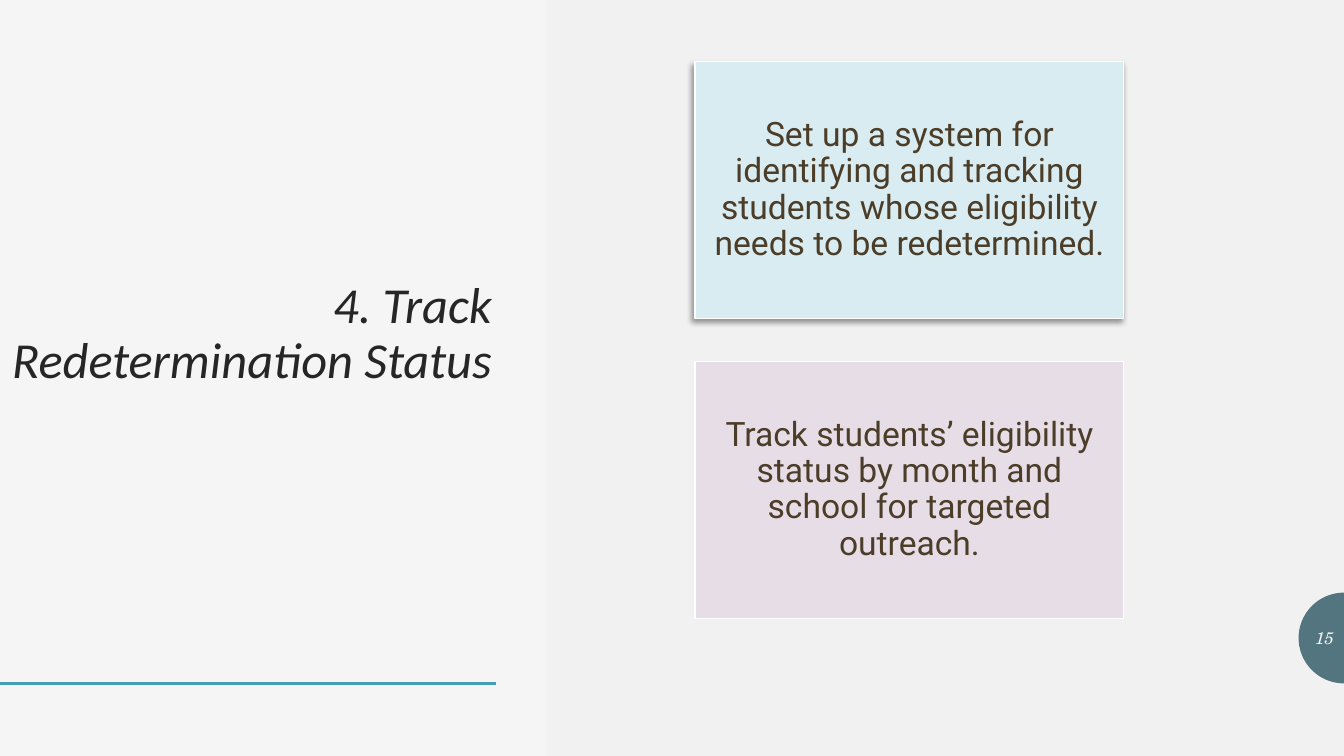
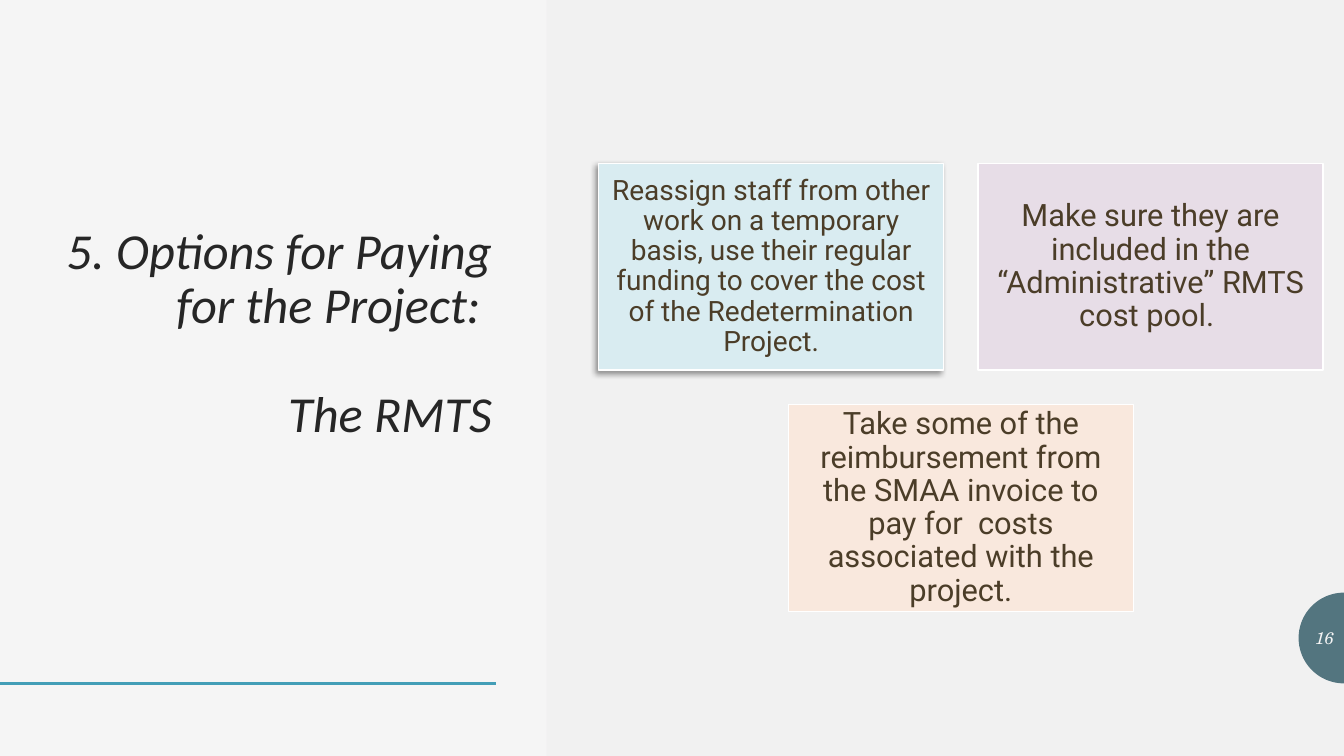
import math

from lxml import etree
from pptx import Presentation
from pptx.dml.color import RGBColor
from pptx.enum import shapes, text
from pptx.oxml import ns
from pptx.util import Inches, Pt

SLIDE_WIDTH, SLIDE_HEIGHT = 13.33, 7.5
BACKGROUND = "F5F5F5"
PANEL = "E9E7E9"
BADGE = "224F5C"
RULE = "439EB7"
TITLE_COLOR = "262626"
CARD_TEXT = "4B3D28"
CARD_LINE = "FFFFFF"
CARD_FILLS = ["D9ECF1", "E7DDE7", "F9E8DD"]
TITLE_FONT, CARD_FONT, NUMBER_FONT = "Calibri", "Roboto", "TeX Gyre Schola"
BADGE_RADIUS = 0.45
BADGE_CENTER = 6.33
RULE_TOP = 6.78


def color(value):
    return RGBColor.from_string(value)


def place(shape, left, top, width, height):
    shape.left, shape.top = Inches(left), Inches(top)
    shape.width, shape.height = Inches(width), Inches(height)


def write_text(shape, *lines, font, size, fill, align, italic=False,
               inset=None, line_spacing=None, space_before=0):
    """Fill the shape with one paragraph per line, centred vertically."""
    frame = shape.text_frame
    frame.word_wrap = True
    frame.auto_size = text.MSO_AUTO_SIZE.NONE
    frame.vertical_anchor = text.MSO_ANCHOR.MIDDLE
    if inset is not None:
        frame.margin_left = frame.margin_right = Inches(inset)
        frame.margin_top = frame.margin_bottom = Inches(inset)
    for index, line in enumerate(lines):
        paragraph = frame.add_paragraph() if index else frame.paragraphs[0]
        paragraph.alignment = align
        paragraph.line_spacing = line_spacing
        paragraph.space_before = Pt(space_before if index else 0)
        run = paragraph.add_run()
        run.text = line
        run.font.name = font
        run.font.size = Pt(size)
        run.font.italic = italic
        run.font.color.rgb = color(fill)


def style_shape(shape, fill, line=None):
    shape.shadow.inherit = False
    shape.fill.solid()
    shape.fill.fore_color.rgb = color(fill)
    if line:
        shape.line.color.rgb = color(line)
        shape.line.width = Pt(1)
    else:
        shape.line.fill.background()


def add_rectangle(slide, left, top, width, height, fill, line=None):
    shape = slide.shapes.add_shape(
        shapes.MSO_SHAPE.RECTANGLE, Inches(left), Inches(top), Inches(width), Inches(height))
    style_shape(shape, fill, line)
    return shape


def set_alpha(color_element, percent):
    alpha = etree.SubElement(color_element, ns.qn("a:alpha"))
    alpha.set("val", str(percent * 1000))


def cast_shadow(shape):
    """Add a soft shadow towards the lower left."""
    effects = shape._element.spPr.find(ns.qn("a:effectLst"))
    shadow = etree.SubElement(
        effects, ns.qn("a:outerShdw"), blurRad=str(Pt(4)), dist=str(Pt(3)),
        dir=str(135 * 60000), algn="tr", rotWithShape="0")
    set_alpha(etree.SubElement(shadow, ns.qn("a:srgbClr"), val="000000"), 40)


def add_badge(slide):
    """Draw the half disc that meets the right edge."""
    points = [
        (Inches(SLIDE_WIDTH - BADGE_RADIUS * math.sin(math.radians(angle))),
         Inches(BADGE_CENTER - BADGE_RADIUS * math.cos(math.radians(angle))))
        for angle in range(0, 181, 4)]
    builder = slide.shapes.build_freeform(*points[0], scale=1.0)
    builder.add_line_segments(points[1:], close=True)
    style_shape(builder.convert_to_shape(), BADGE)


def add_rule(slide):
    rule = slide.shapes.add_connector(
        shapes.MSO_CONNECTOR.STRAIGHT, 0, Inches(RULE_TOP), Inches(4.92), Inches(RULE_TOP))
    rule.line.color.rgb = color(RULE)
    rule.line.width = Pt(2)
    etree.SubElement(rule._element.spPr, ns.qn("a:effectLst"))


def add_panel(slide):
    left = 5.42
    panel = add_rectangle(slide, left, 0, SLIDE_WIDTH - left, SLIDE_HEIGHT, PANEL)
    set_alpha(panel._element.spPr.find(".//" + ns.qn("a:srgbClr")), 25)


def add_number(slide, number):
    box = slide.shapes.add_textbox(0, 0, 0, 0)
    place(box, SLIDE_WIDTH - BADGE_RADIUS, 6.13, BADGE_RADIUS, 0.4)
    write_text(box, str(number), font=NUMBER_FONT, size=12, fill=BACKGROUND,
               align=text.PP_ALIGN.RIGHT, italic=True)


def add_base_slide(presentation, number, *title_lines):
    slide = presentation.slides.add_slide(presentation.slide_layouts[5])
    add_badge(slide)
    add_rule(slide)
    add_panel(slide)
    title = slide.shapes.title
    place(title, 0, 0.61, 4.98, 5.42)
    write_text(title, *title_lines, font=TITLE_FONT, size=36, fill=TITLE_COLOR,
               align=text.PP_ALIGN.RIGHT, italic=True, line_spacing=0.9, space_before=39)
    add_number(slide, number)
    return slide


def add_cards(slide, rows, center, top, width):
    """Centre each row of (text, size, inset) cards; gaps are a tenth of the width."""
    height, gap = width * 0.6, width * 0.1
    fills = iter(CARD_FILLS)
    for row_index, row in enumerate(rows):
        row_left = center - (len(row) * (width + gap) - gap) / 2
        row_top = top + row_index * (height + gap)
        for column, (words, size, inset) in enumerate(row):
            card = add_rectangle(slide, row_left + column * (width + gap), row_top,
                                 width, height, next(fills), CARD_LINE)
            write_text(card, words, font=CARD_FONT, size=size, fill=CARD_TEXT,
                       align=text.PP_ALIGN.CENTER, inset=inset, line_spacing=0.9)
            if row_index == column == 0:
                cast_shadow(card)


def main():
    presentation = Presentation()
    presentation.slide_width = Inches(SLIDE_WIDTH)
    presentation.slide_height = Inches(SLIDE_HEIGHT)
    background = presentation.slide_master.background.fill
    background.solid()
    background.fore_color.rgb = color(BACKGROUND)

    tracking = add_base_slide(presentation, 15, "4. Track Redetermination Status")
    add_cards(tracking, [
        [("Set up a system for identifying and tracking students whose eligibility "
          "needs to be redetermined.", 24, 0.1)],
        [("Track students’ eligibility status by month and school for targeted outreach.",
          24, 0.1)],
    ], center=9.02, top=0.61, width=4.25)

    paying = add_base_slide(presentation, 16, "5. Options for Paying for the Project: ", "The RMTS")
    add_cards(paying, [
        [("Reassign staff from other work on a temporary basis, use their regular funding "
          "to cover the cost of the Redetermination Project.", 20, 0.08),
         ("Make sure they are included in the “Administrative” RMTS cost pool. ", 22, 0.09)],
        [("Take some of the reimbursement from the SMAA invoice to pay for  costs "
          "associated with the project.", 22, 0.09)],
    ], center=9.53, top=1.62, width=3.42)

    presentation.save("out.pptx")


if __name__ == "__main__":
    main()
